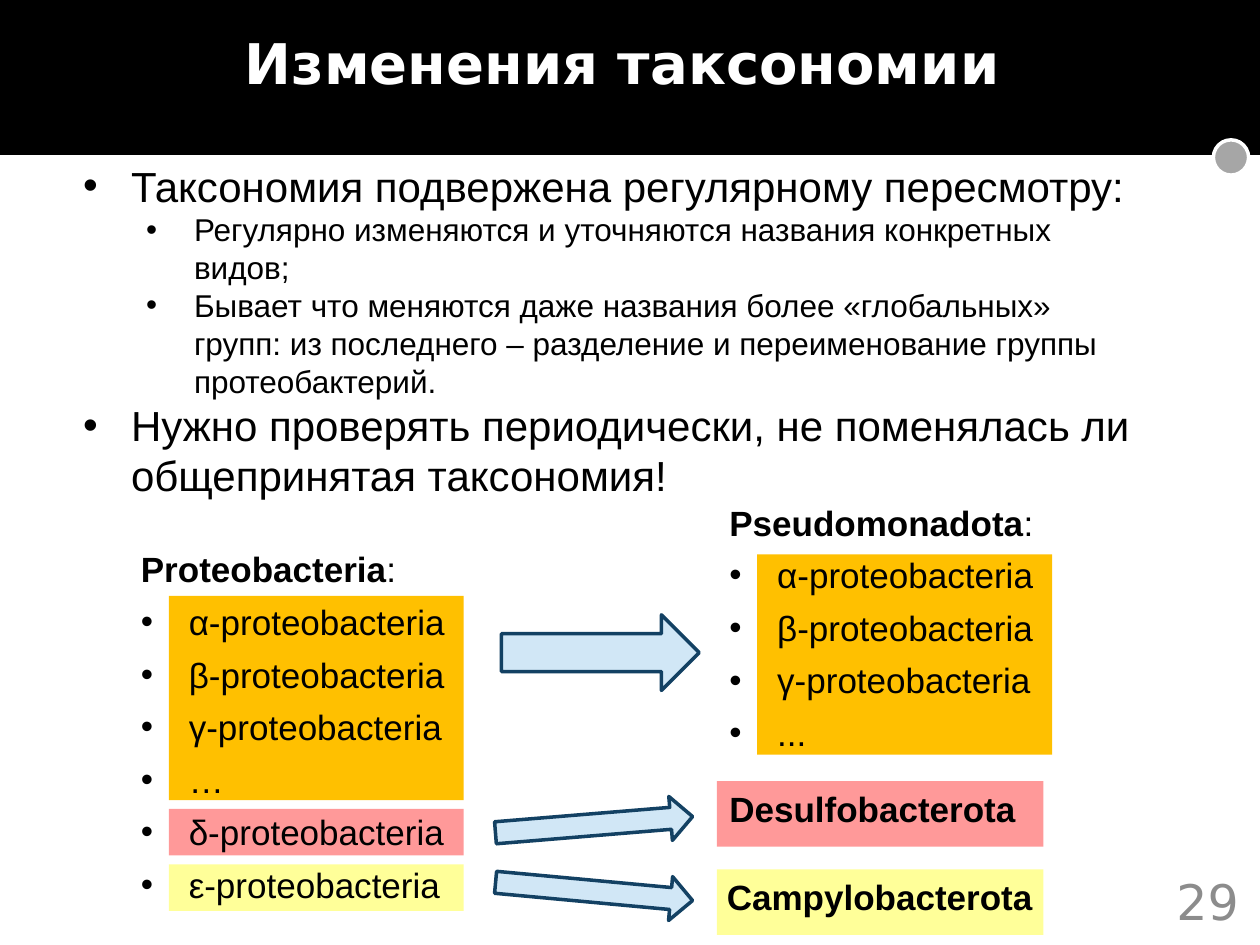
from lxml.etree import SubElement
from pptx import Presentation
from pptx.dml.color import RGBColor as Rgb
from pptx.enum.shapes import MSO_CONNECTOR as Conn, MSO_SHAPE as Kind
from pptx.enum.text import MSO_ANCHOR as Anchor, MSO_AUTO_SIZE as Fit, PP_ALIGN as Align
from pptx.oxml.ns import qn
from pptx.util import Inches as In, Pt

WIDE, HIGH = 10, 7.5
HEX = {
    "black": "000000", "white": "FFFFFF", "dot": "A6A6A6", "page": "8C8C8C",
    "gold": "FFC000", "pink": "FF9999", "lemon": "FFFF99",
    "sky": "D1E7F6", "navy": "134163",
}
INDENT = 0.38
GREEK = [f"{c}-proteobacteria" for c in "αβγδε"]


def color(name):
    return Rgb.from_string(HEX[name])


def place(shape, box):
    shape.left, shape.top, shape.width, shape.height = map(In, box)


def draw(slide, kind, box, fill, line=None, turn=0):
    """Add a flat preset shape."""
    shape = slide.shapes.add_shape(kind, *map(In, box))
    shape.shadow.inherit = False
    shape.fill.solid()
    shape.fill.fore_color.rgb = color(fill)
    if line:
        shape.line.color.rgb = color(line)
        shape.line.width = Pt(2)
    else:
        shape.line.fill.background()
    shape.rotation = turn
    return shape


def frame(shape, anchor=Anchor.TOP):
    text = shape.text_frame
    text.word_wrap = True
    text.auto_size = Fit.NONE
    text.vertical_anchor = anchor
    return text


def label(slide, box, anchor=Anchor.TOP):
    return frame(slide.shapes.add_textbox(*map(In, box)), anchor)


def write(text, words, size=20, font="Arial", ink="black", bold=False, tail="",
          align=Align.LEFT, level=0, bullet=False, after=0):
    """Add one paragraph; the tail follows the words in regular weight."""
    para = text.paragraphs[0]
    if para.runs:
        para = text.add_paragraph()
    para.alignment, para.level = align, level
    para.line_spacing = 1.0
    para.space_before, para.space_after = Pt(0), Pt(after)
    if bullet:
        prop = para._p.get_or_add_pPr()
        prop.set("marL", str(In(INDENT + level * 0.5)))
        prop.set("indent", str(-In(INDENT)))
        SubElement(prop, qn("a:buFont"), typeface="Arial")
        SubElement(prop, qn("a:buChar"), char="•")
    for part, heavy in ((words, bold), (tail, False)):
        if part:
            run = para.add_run()
            run.text = part
            run.font.size, run.font.name, run.font.bold = Pt(size), font, heavy
            run.font.color.rgb = color(ink)


def header(slide, box):
    """Black band with a rule, a dot and the title."""
    x, y, w, h = box
    band = draw(slide, Kind.RECTANGLE, box, "black")
    slide.shapes.title.element.addprevious(band.element)
    rule = slide.shapes.add_connector(
        Conn.STRAIGHT, In(x), In(y + h + 0.02), In(x + w - 0.33), In(y + h + 0.02))
    rule.line.color.rgb = color("white")
    rule.line.width = Pt(2)
    SubElement(rule.element.spPr, qn("a:effectLst"))
    draw(slide, Kind.OVAL, (x + w - 0.37, y + h - 0.12, 0.28, 0.28), "dot", "white")

    title = slide.shapes.title
    place(title, (x + 0.08, y + 0.18, w - 0.28, 0.64))
    write(frame(title), "Изменения таксономии", size=32, font="DejaVu Sans",
          ink="white", bold=True, align=Align.CENTER)


def points(slide, box):
    """Main list in the body placeholder."""
    body = slide.placeholders[1]
    place(body, box)
    text = frame(body)
    for level, words in (
        (0, "Таксономия подвержена регулярному пересмотру:"),
        (1, "Регулярно изменяются и уточняются названия конкретных видов;"),
        (1, "Бывает что меняются даже названия более «глобальных» групп: "
            "из последнего – разделение и переименование группы протеобактерий."),
        (0, "Нужно проверять периодически, не поменялась ли "
            "общепринятая таксономия!"),
    ):
        write(text, words, size=18 if level else 24, level=level, bullet=True)


def group(slide, box, name, items, bars):
    """Named list over colour bars, each given as (offset, height, fill)."""
    x, y, w, h = box
    for down, tall, fill in bars:
        draw(slide, Kind.RECTANGLE, (x + 0.32, y + down, 2.34, tall), fill)
    text = label(slide, box)
    write(text, name, bold=True, tail=":", after=6)
    for item in items:
        write(text, item, bullet=True, after=6)


def phylum(slide, box, name, fill, shift=0):
    """Bold name on a colour bar."""
    x, y, w, h = box
    draw(slide, Kind.RECTANGLE, box, fill)
    write(label(slide, (x + shift, y, 3.23, 0.44)), name, bold=True, after=6)


def arrows(slide, box):
    """One wide arrow and two thin ones tilted apart."""
    x, y, w, h = box
    for dx, dy, tall, turn in ((0.05, 0, 0.6, 0), (0, 1.49, 0.35, -4.7),
                               (0, h - 0.35, 0.35, 5.3)):
        draw(slide, Kind.RIGHT_ARROW, (x + dx, y + dy, w - 0.05, tall),
             "sky", "navy", turn)


def main():
    deck = Presentation()
    deck.slide_width, deck.slide_height = In(WIDE), In(HIGH)
    slide = deck.slides.add_slide(deck.slide_layouts[1])

    header(slide, (0, 0, WIDE, 1.23))
    points(slide, (0.56, 1.22, 8.51, 2.83))

    # Old taxonomy on the left, new one on the right
    group(slide, (1.02, 4.3, 3.23, 2.96), "Proteobacteria",
          GREEK[:3] + ["…"] + GREEK[3:],
          ((0.43, 1.62, "gold"), (2.12, 0.37, "pink"), (2.56, 0.37, "lemon")))
    group(slide, (5.69, 3.93, 3.23, 2.12), "Pseudomonadota",
          GREEK[:3] + ["..."], ((0.47, 1.59, "gold"),))
    phylum(slide, (5.69, 6.2, 2.59, 0.52), "Desulfobacterota", "pink")
    phylum(slide, (5.69, 6.9, 2.59, 0.52), "Campylobacterota", "lemon", -0.02)
    arrows(slide, (3.93, 4.88, 1.62, 2.37))

    # Page number
    write(label(slide, (7.6, 6.95, 2.33, 0.4), Anchor.MIDDLE), "29", size=28,
          font="DejaVu Sans", ink="page", align=Align.RIGHT)
    deck.save("out.pptx")


if __name__ == "__main__":
    main()
